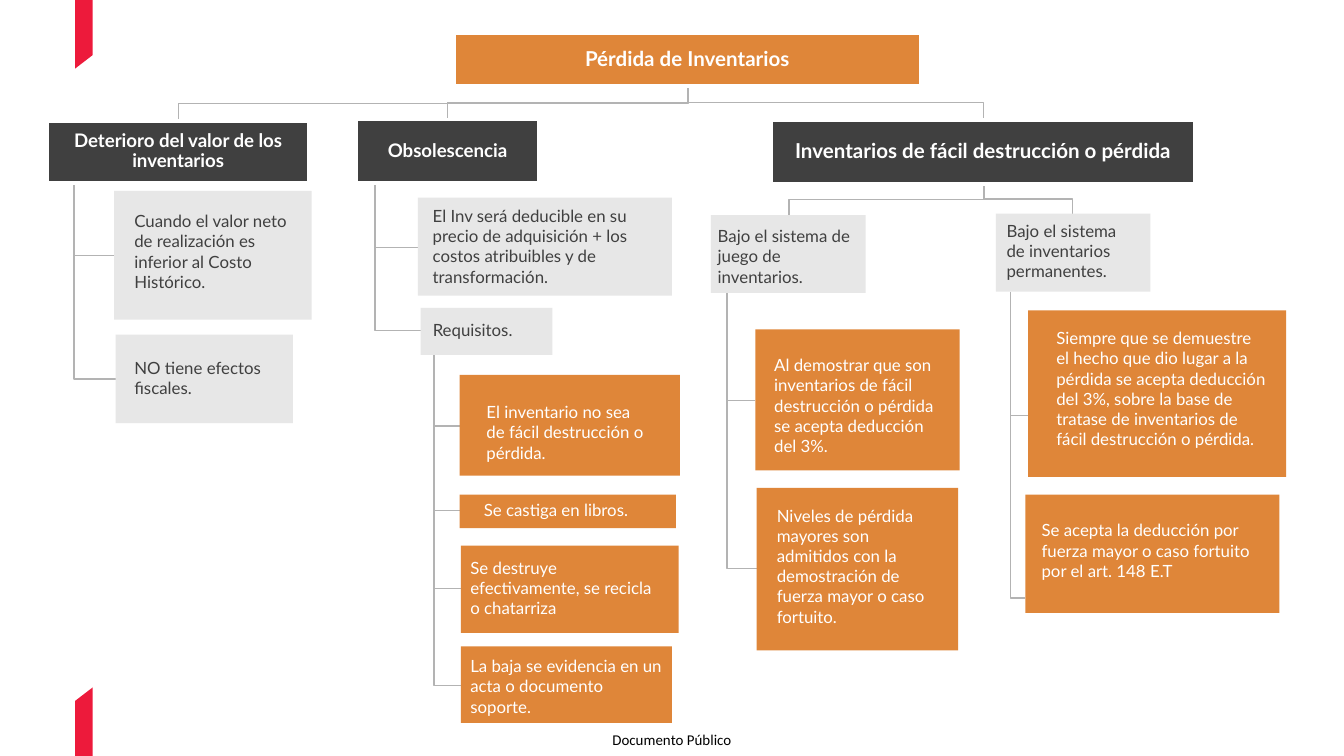
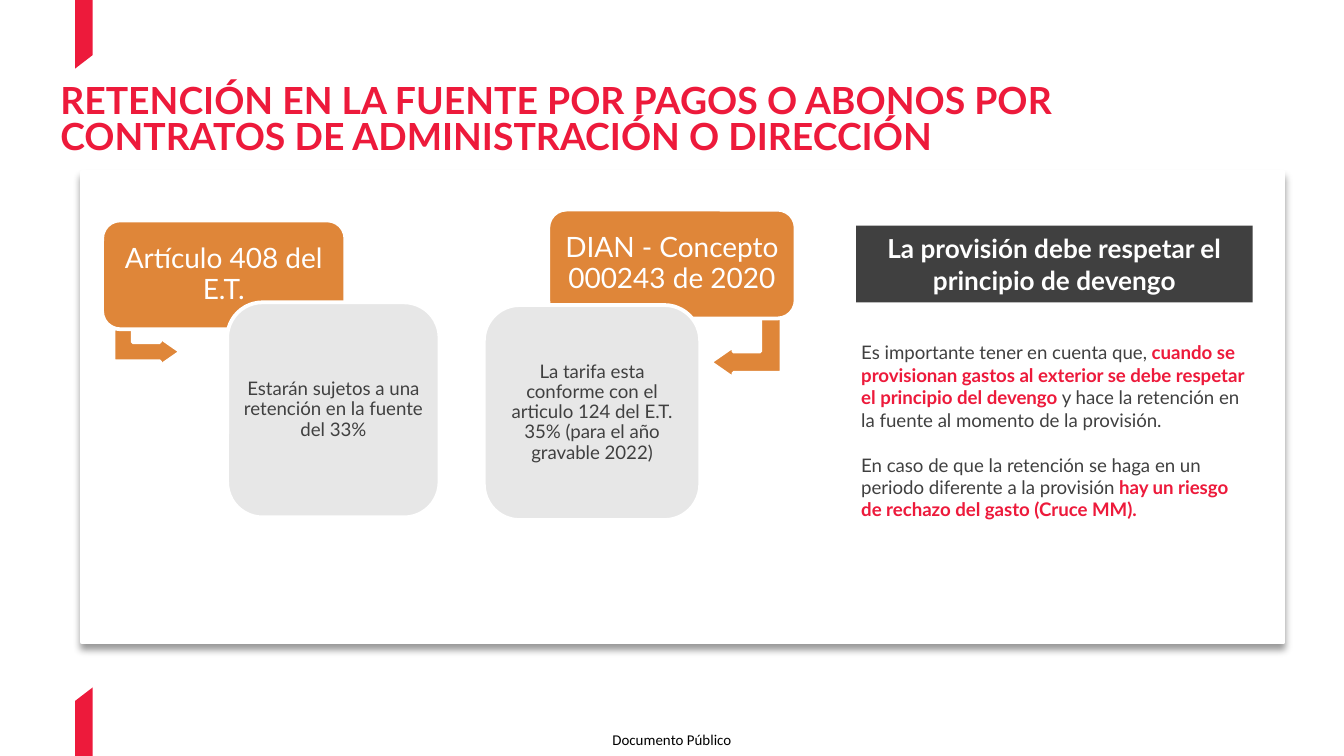
from lxml import etree
from pptx import Presentation
from pptx import util as u
from pptx.dml.color import RGBColor
from pptx.enum import shapes, text
from pptx.oxml.ns import qn

COLORS = {
    "red": "ED1A3B",
    "orange": "DF8639",
    "dark": "404040",
    "grey": "E7E7E7",
    "line": "B3B3B3",
    "white": "FFFFFF",
    "black": "000000",
}
FONT = "Lato"
MARKER_LEFT, MARKER_RIGHT = 0.56, 0.69
SHAPE = shapes.MSO_SHAPE
ALIGN = text.PP_ALIGN
ANCHOR = text.MSO_ANCHOR

# Each card: box, (left, top, right) insets, wording
GREY_CARDS = [
    ((0.85, 1.42, 1.47, 0.96), (0.15, 0.15, 0.06),
     "Cuando el valor neto de realización es inferior al Costo Histórico."),
    ((0.86, 2.49, 1.32, 0.66), (0.14, 0.17, 0), "NO tiene efectos fiscales."),
    ((3.11, 1.47, 1.89, 0.73), (0.11, 0.06, 0.04),
     "El Inv será deducible en su precio de adquisición + los costos "
     "atribuibles y de transformación."),
    ((3.13, 2.29, 0.98, 0.35), (0.09, 0.09, 0), "Requisitos."),
    ((5.29, 1.6, 1.15, 0.58), (0.05, 0.08, 0.07),
     "Bajo el sistema de juego de inventarios."),
    ((7.41, 1.59, 1.15, 0.58), (0.08, 0.05, 0.11),
     "Bajo el sistema de inventarios permanentes."),
]
ORANGE_CARDS = [
    ((3.42, 2.79, 1.64, 0.75), (0.2, 0.2, 0.24),
     "El inventario no sea de fácil destrucción o pérdida."),
    ((3.42, 3.68, 1.61, 0.25), (0.18, 0.04, 0), "Se castiga en libros."),
    ((3.43, 4.06, 1.62, 0.65), (0.07, 0.09, 0.15),
     "Se destruye efectivamente, se recicla o chatarriza"),
    ((3.43, 4.81, 1.57, 0.57), (0.07, 0.07, 0.04),
     "La baja se evidencia en un acta o documento soporte."),
    ((5.62, 2.45, 1.52, 1.05), (0.14, 0.19, 0.13),
     "Al demostrar que son inventarios de fácil destrucción o pérdida "
     "se acepta deducción del 3%."),
    ((5.63, 3.63, 1.5, 1.21), (0.15, 0.13, 0.1),
     "Niveles de pérdida mayores son admitidos con la demostración de "
     "fuerza mayor o caso fortuito."),
    ((7.65, 2.31, 1.92, 1.24), (0.21, 0.13, 0.15),
     "Siempre que se demuestre el hecho que dio lugar a la pérdida se "
     "acepta deducción del 3%, sobre la base de tratase de inventarios de "
     "fácil destrucción o pérdida."),
    ((7.63, 3.68, 1.89, 0.88), (0.12, 0.19, 0.21),
     "Se acepta la deducción por fuerza mayor o caso fortuito por el "
     "art. 148 E.T"),
]
# Each heading: box, fill, size, wording
HEADINGS = [
    ((3.38, 0.25, 3.47, 0.39), "orange", 11, "Pérdida de Inventarios"),
    ((0.35, 0.9, 1.95, 0.46), "dark", 10,
     "Deterioro del valor de los inventarios"),
    ((2.65, 0.89, 1.36, 0.47), "dark", 10, "Obsolescencia"),
    ((5.74, 0.89, 3.15, 0.48), "dark", 11,
     "Inventarios de fácil destrucción o pérdida"),
]
# Each fork: parent point, children points
FORKS = [
    ((5.12, 0.64), [(1.33, 0.9), (3.33, 0.89), (7.32, 0.89)]),
    ((7.32, 1.37), [(5.87, 1.6), (7.98, 1.59)]),
]
# Each trunk: top point, ends of its branches
TRUNKS = [
    ((0.55, 1.36), [(0.85, 1.9), (0.86, 2.82)]),
    ((2.79, 1.36), [(3.11, 1.84), (3.13, 2.46)]),
    ((3.23, 2.64), [(3.42, 3.17), (3.42, 3.8), (3.43, 4.38), (3.43, 5.1)]),
    ((5.41, 2.17), [(5.62, 2.98), (5.63, 4.23)]),
    ((7.52, 2.17), [(7.65, 3.09), (7.63, 4.45)]),
]


def rgb(name):
    return RGBColor.from_string(COLORS[name])


def inches(values):
    return [u.Inches(value) for value in values]


def style_font(font, size, color, bold=False, name=FONT):
    font.name = name
    font.size = u.Pt(size)
    font.bold = bold
    font.color.rgb = rgb(color)


def set_frame(box, insets, anchor):
    """Wrap the text; insets run left, top, right, bottom."""
    frame = box.text_frame
    frame.word_wrap = True
    frame.vertical_anchor = anchor
    (frame.margin_left, frame.margin_top,
     frame.margin_right, frame.margin_bottom) = inches(insets)
    return frame


def write(box, wording, size, color, bold=False, align=ALIGN.LEFT,
          insets=(0.1, 0.05, 0.1, 0.05), anchor=ANCHOR.TOP, spacing=None,
          font=FONT):
    frame = set_frame(box, insets, anchor)
    para = frame.paragraphs[0]
    para.text = wording
    para.alignment = align
    para.line_spacing = spacing
    style_font(para.font, size, color, bold, font)


def add_block(page, kind, at, fill, outlined=False):
    block = page.shapes.add_shape(kind, *inches(at))
    block.shadow.inherit = False
    block.fill.solid()
    block.fill.fore_color.rgb = rgb(fill)
    if outlined:
        block.line.color.rgb = rgb("white")
        block.line.width = u.Pt(2)
    else:
        block.line.fill.background()
    return block


def add_outline(page, points, close):
    first, *rest = [inches(point) for point in points]
    builder = page.shapes.build_freeform(*first)
    builder.add_line_segments(rest, close=close)
    outline = builder.convert_to_shape()
    outline.shadow.inherit = False
    return outline


def add_marker(page, points):
    marker = add_outline(page, points, close=True)
    marker.fill.solid()
    marker.fill.fore_color.rgb = rgb("red")
    marker.line.fill.background()


def add_branch(page, points):
    branch = add_outline(page, points, close=False)
    branch.fill.background()
    branch.line.color.rgb = rgb("line")
    branch.line.width = u.Pt(0.75)


def add_fork(page, parent, children):
    for x, y in children:
        middle = (parent[1] + y) / 2
        add_branch(page, [parent, (parent[0], middle), (x, middle), (x, y)])


def add_trunk(page, top, ends):
    for x, y in ends:
        add_branch(page, [top, (top[0], y), (x, y)])


def add_heading(page, at, fill, size, wording):
    block = add_block(page, SHAPE.RECTANGLE, at, fill, outlined=True)
    write(block, wording, size, "white", True, ALIGN.CENTER,
          [0.01] * 4, ANCHOR.MIDDLE, 0.9)


def add_card(page, at, insets, wording, fill, color):
    block = add_block(page, SHAPE.RECTANGLE, at, fill)
    write(block, wording, 9, color, insets=(*insets, 0))


def add_rounded(page, at, fill, size, color, inset, wording):
    block = add_block(page, SHAPE.ROUNDED_RECTANGLE, at, fill, outlined=True)
    write(block, wording, size, color, align=ALIGN.CENTER,
          insets=[inset] * 4, anchor=ANCHOR.MIDDLE, spacing=0.9)


def add_bent_arrow(page, at, flipped=False):
    arrow = add_block(page, SHAPE.BENT_UP_ARROW, at, "orange", outlined=True)
    for index, value in enumerate((0.33, 0.25, 0.36)):
        arrow.adjustments[index] = value
    arrow.rotation = 90
    if flipped:
        arrow._element.spPr.find(qn("a:xfrm")).set("flipV", "1")


def add_panel(page, at):
    """White panel with a soft shadow below it."""
    panel = add_block(page, SHAPE.RECTANGLE, at, "white", outlined=True)
    effects = panel._element.spPr.find(qn("a:effectLst"))
    shadow = etree.SubElement(
        effects, qn("a:outerShdw"), blurRad=str(u.Pt(4)), dist=str(u.Pt(3)),
        dir="5400000", algn="t", rotWithShape="0")
    tint = etree.SubElement(shadow, qn("a:srgbClr"), val=COLORS["black"])
    etree.SubElement(tint, qn("a:alpha"), val="40000")


def add_rich_text(page, at, paragraphs, gap):
    """Paragraphs are lists of (wording, emphasised) spans."""
    box = page.shapes.add_textbox(*inches(at))
    frame = set_frame(box, (0.1, 0.05, 0.1, 0.05), ANCHOR.TOP)
    for index, spans in enumerate(paragraphs):
        para = frame.add_paragraph() if index else frame.paragraphs[0]
        if index:
            para.space_before = u.Pt(gap)
        for wording, emphasised in spans:
            span = para.add_run()
            span.text = wording
            style_font(span.font, 10, "red" if emphasised else "dark",
                       emphasised)


def add_page(deck):
    """Blank page with the red markers and the footer."""
    page = deck.slides.add_slide(deck.slide_layouts[6])
    bottom = deck.slide_height / u.Inches(1)
    add_marker(page, [(MARKER_LEFT, bottom - 0.41), (MARKER_LEFT, bottom),
                      (MARKER_RIGHT, bottom), (MARKER_RIGHT, bottom - 0.51)])
    add_marker(page, [(MARKER_RIGHT, 0.41), (MARKER_RIGHT, 0),
                      (MARKER_LEFT, 0), (MARKER_LEFT, 0.51)])
    footer = page.shapes.add_textbox(*inches((4.42, 5.38, 1.16, 0.25)))
    write(footer, "Documento Público", 8, "black", align=ALIGN.CENTER,
          insets=[0] * 4, anchor=ANCHOR.MIDDLE, font="Calibri")
    return page


def build_inventory_page(deck):
    page = add_page(deck)
    for parent, children in FORKS:
        add_fork(page, parent, children)
    for top, ends in TRUNKS:
        add_trunk(page, top, ends)
    for heading in HEADINGS:
        add_heading(page, *heading)
    for card in GREY_CARDS:
        add_card(page, *card, "grey", "dark")
    for card in ORANGE_CARDS:
        add_card(page, *card, "orange", "white")


def build_withholding_page(deck):
    page = add_page(deck)
    add_panel(page, (0.61, 1.28, 8.94, 3.5))
    title = page.shapes.add_textbox(*inches((0.35, 0.59, 9.31, 0.32)))
    write(title, "RETENCIÓN EN LA FUENTE POR PAGOS O ABONOS POR CONTRATOS DE "
          "ADMINISTRACIÓN O DIRECCIÓN", 20, "red", True, spacing=0.8)

    add_bent_arrow(page, (0.88, 2.26, 0.43, 0.5))
    add_rounded(page, (0.76, 1.64, 1.81, 0.81), "orange", 15, "white", 0.06,
                "Artículo 408 del E.T.")
    add_rounded(page, (1.69, 2.25, 1.58, 1.6), "grey", 10, "dark", 0.04,
                "Estarán sujetos a una retención en la fuente del 33%")
    add_bent_arrow(page, (5.31, 2.31, 0.48, 0.53), flipped=True)
    add_rounded(page, (4.08, 1.56, 1.84, 0.81), "orange", 15, "white", 0.06,
                "DIAN - Concepto 000243 de 2020")
    add_rounded(page, (3.6, 2.27, 1.61, 1.6), "grey", 10, "dark", 0.06,
                "La tarifa esta conforme con el articulo 124 del E.T. 35% "
                "(para el año gravable 2022)")

    add_rich_text(page, (6.31, 2.49, 3.07, 1.62), [
        [("Es importante tener en cuenta que, ", False),
         ("cuando se provisionan gastos al exterior se debe respetar el "
          "principio del devengo ", True),
         ("y hace la retención en la fuente al momento de la provisión.",
          False)],
        [("En caso de que la retención se haga en un periodo diferente a la "
          "provisión ", False),
         ("hay un riesgo de rechazo del gasto (Cruce MM).", True)],
    ], gap=12)
    principle = add_block(page, SHAPE.RECTANGLE, (6.37, 1.68, 2.95, 0.57),
                          "dark")
    write(principle, "La provisión debe respetar el principio de devengo", 14,
          "white", True, ALIGN.CENTER, anchor=ANCHOR.MIDDLE)


def main():
    deck = Presentation()
    deck.slide_width = u.Inches(10)
    deck.slide_height = deck.slide_width * 9 // 16
    build_inventory_page(deck)
    build_withholding_page(deck)
    deck.save("out.pptx")


if __name__ == "__main__":
    main()
